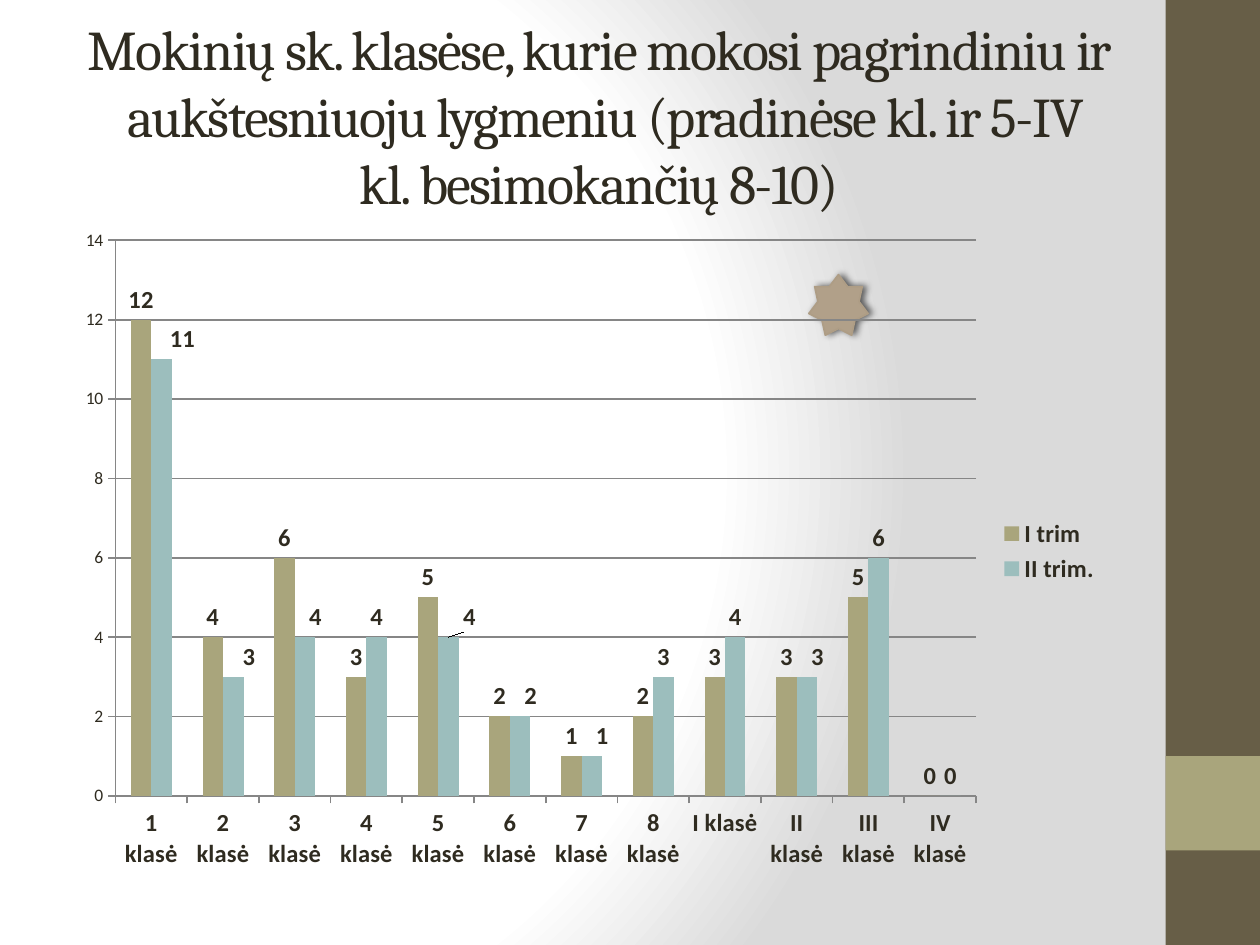
import pptx
import pptx.chart.data
import pptx.dml.color
import pptx.enum.chart
import pptx.enum.shapes
import pptx.enum.text
import pptx.oxml
import pptx.oxml.ns
import pptx.util
from pptx.util import Inches

DARK, OLIVE, TEAL, GRAY = "2F2B20", "A9A57C", "9CBEBD", "868686"
TITLE = ("Mokinių sk. klasėse, kurie mokosi pagrindiniu ir  aukštesniuoju "
         "lygmeniu (pradinėse kl. ir 5-IV kl. besimokančių 8-10)")
GRADES = ["1", "2", "3", "4", "5", "6", "7", "8", "I", "II", "III", "IV"]
SERIES = {
    "I trim": (OLIVE, [12, 4, 6, 3, 5, 2, 1, 2, 3, 3, 5, 0]),
    "II trim.": (TEAL, [11, 3, 4, 4, 4, 2, 1, 3, 4, 3, 6, 0]),
}
# Second-series labels moved right, as fractions of the chart width
LABEL_SHIFTS = {0: 0.02, 1: 0.015, 2: 0.01, 4: 0.02, 5: 0.01, 6: 0.01, 9: 0.01}
STRONG = {"size": pptx.util.Pt(14), "bold": True}


def color(value):
    return pptx.dml.color.RGBColor.from_string(value)


def paint(fill, value):
    fill.solid()
    fill.fore_color.rgb = color(value)


def set_line(line, value, width=1):
    paint(line.fill, value)
    line.width = pptx.util.Pt(width)


def set_format(target, values):
    for name, value in values.items():
        setattr(target, name, value)


def set_background(slide):
    """Fill the background with a radial white-to-gray gradient."""
    slide.background.fill.gradient()
    gradient = slide.element.find(".//" + pptx.oxml.ns.qn("a:gradFill"))
    stops = "".join(
        f'<a:gs pos="{place * 1000}"><a:srgbClr val="{shade}"/></a:gs>'
        for place, shade in [(0, "FFFFFF"), (75, "FFFFFF"), (100, "DADADA")])
    new_gradient = pptx.oxml.parse_xml(
        f'<a:gradFill {pptx.oxml.ns.nsdecls("a")} rotWithShape="1">'
        f'<a:gsLst>{stops}</a:gsLst><a:path path="circle">'
        '<a:fillToRect l="20000" t="50000" r="100000" b="50000"/>'
        '</a:path></a:gradFill>')
    gradient.getparent().replace(gradient, new_gradient)


def add_shape(slide, kind, place, fill):
    shape = slide.shapes.add_shape(kind, *map(Inches, place))
    shape.shadow.inherit = False
    paint(shape.fill, fill)
    shape.line.fill.background()
    return shape


def add_star(slide):
    star = add_shape(slide, pptx.enum.shapes.MSO_SHAPE.STAR_7_POINT,
                     (6.42, 2.18, 0.47, 0.48), "B1A089")
    set_line(star.line, "AE9D85")
    effects = star.element.spPr.find(pptx.oxml.ns.qn("a:effectLst"))
    effects.append(pptx.oxml.parse_xml(
        f'<a:outerShdw {pptx.oxml.ns.nsdecls("a")} blurRad="{pptx.util.Pt(4)}" '
        f'dist="{pptx.util.Pt(2)}" dir="0" rotWithShape="0">'
        '<a:srgbClr val="000000"><a:alpha val="60000"/></a:srgbClr></a:outerShdw>'))


def fill_title(slide):
    title = slide.shapes.title
    set_format(title, {"left": Inches(0.59), "top": Inches(0.29),
                       "width": Inches(8.33), "height": Inches(1.25)})
    set_format(title.text_frame, {
        "text": TITLE, "word_wrap": True,
        "auto_size": pptx.enum.text.MSO_AUTO_SIZE.NONE,
        "vertical_anchor": pptx.enum.text.MSO_ANCHOR.MIDDLE})
    para = title.text_frame.paragraphs[0]
    para.alignment = pptx.enum.text.PP_ALIGN.CENTER
    span = para.runs[0]
    set_format(span.font, {"size": pptx.util.Pt(32), "name": "Cambria"})
    span.font.color.rgb = color(DARK)
    span.font._element.set("spc", "-100")


def set_layout(parent, position, modes, values):
    """Give a chart part a manual layout from its mode and value entries."""
    for old in parent.findall(pptx.oxml.ns.qn("c:layout")):
        parent.remove(old)
    entries = "".join(f'<c:{name} val="{value}"/>'
                      for name, value in [*modes.items(), *values.items()])
    parent.insert(position, pptx.oxml.parse_xml(
        f'<c:layout {pptx.oxml.ns.nsdecls("c")}>'
        f'<c:manualLayout>{entries}</c:manualLayout></c:layout>'))


def style_axes(chart):
    for axis in (chart.category_axis, chart.value_axis):
        axis.major_tick_mark = pptx.enum.chart.XL_TICK_MARK.OUTSIDE
        set_line(axis.format.line, GRAY)
    set_format(chart.category_axis.tick_labels.font, STRONG)
    set_format(chart.value_axis, {"minimum_scale": 0, "maximum_scale": 14,
                                  "major_unit": 2, "has_major_gridlines": True})
    set_line(chart.value_axis.major_gridlines.format.line, GRAY)


def style_series(series, fill):
    paint(series.format.fill, fill)
    series.invert_if_negative = False
    labels = series.data_labels
    set_format(labels, {
        "show_value": True,
        "position": pptx.enum.chart.XL_LABEL_POSITION.OUTSIDE_END})
    set_format(labels.font, STRONG)


def shift_labels(series):
    for index in LABEL_SHIFTS:
        label = series.points[index].data_label
        set_format(label.font, STRONG)
        label.position = pptx.enum.chart.XL_LABEL_POSITION.OUTSIDE_END
    labels = series.data_labels._element.findall(pptx.oxml.ns.qn("c:dLbl"))
    for label, shift in zip(labels, LABEL_SHIFTS.values()):
        set_layout(label, 1, {}, {"x": shift, "y": 0})


def add_pupil_chart(slide):
    data = pptx.chart.data.CategoryChartData()
    data.categories = [f"{grade} klasė" for grade in GRADES]
    for name, (_, counts) in SERIES.items():
        data.add_series(name, counts)
    chart = slide.shapes.add_chart(
        pptx.enum.chart.XL_CHART_TYPE.COLUMN_CLUSTERED,
        *map(Inches, (0.5, 1.75, 8.33, 5.25)), data).chart
    set_format(chart, {"has_title": False, "has_legend": True})
    set_format(chart.font, {"size": pptx.util.Pt(10), "name": "Calibri"})
    chart.font.color.rgb = color(DARK)
    set_format(chart.legend, {
        "position": pptx.enum.chart.XL_LEGEND_POSITION.RIGHT,
        "include_in_layout": False})
    set_format(chart.legend.font, STRONG)
    style_axes(chart)
    plot = chart.plots[0]
    set_format(plot, {"gap_width": 150, "vary_by_categories": False})
    for series in plot.series:
        style_series(series, SERIES[series.name][0])
    shift_labels(plot.series[1])
    area = chart.element.find(".//" + pptx.oxml.ns.qn("c:plotArea"))
    set_layout(area, 0,
               {"layoutTarget": "inner", "xMode": "edge", "yMode": "edge"},
               {"x": 0.05, "y": 0.03, "w": 0.82, "h": 0.84})


def main():
    deck = pptx.Presentation()
    set_format(deck, {"slide_width": Inches(10), "slide_height": Inches(7.5)})
    slide = deck.slides.add_slide(deck.slide_layouts[5])
    set_background(slide)
    rectangle = pptx.enum.shapes.MSO_SHAPE.RECTANGLE
    add_shape(slide, rectangle, (9.25, 0, 0.75, 7.5), "675E47")
    add_shape(slide, rectangle, (9.25, 6, 0.75, 0.75), OLIVE)
    fill_title(slide)
    add_star(slide)
    add_pupil_chart(slide)
    deck.save("out.pptx")


if __name__ == "__main__":
    main()
